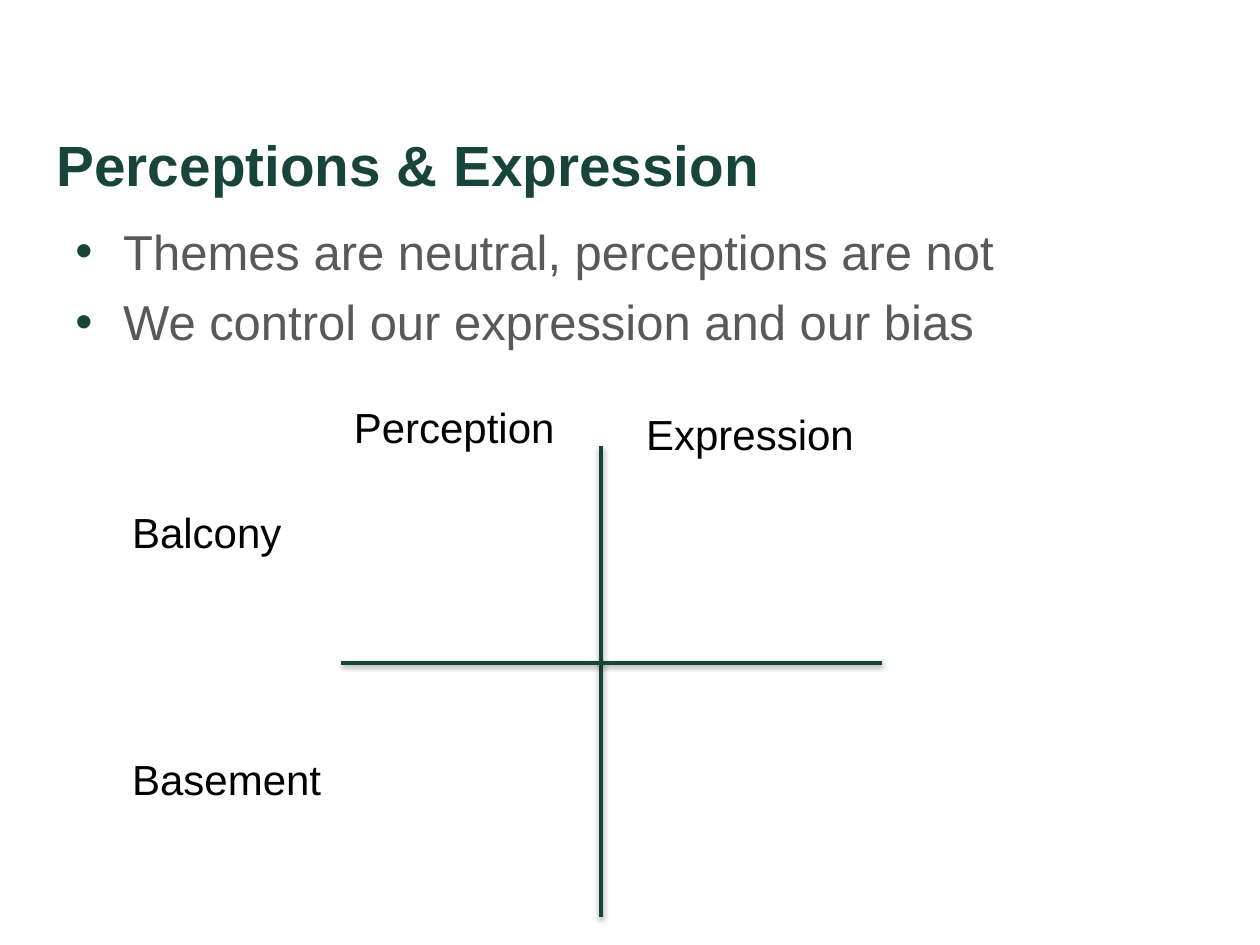
from dataclasses import dataclass

import pptx
import pptx.dml.color
import pptx.enum.shapes
import pptx.enum.text
import pptx.oxml
import pptx.oxml.ns
import pptx.util
from pptx.util import Inches


@dataclass(frozen=True)
class Theme:
    font: str = "Arial"
    green: str = "18453B"
    grey: str = "595959"
    black: str = "000000"
    title: float = 32.4
    body: float = 28
    label: float = 24
    gap: float = 6.5
    line: float = 2


THEME = Theme()


def rgb(code):
    return pptx.dml.color.RGBColor.from_string(code)


def make(xml):
    space = pptx.oxml.ns.nsdecls("a")
    return pptx.oxml.parse_xml(xml.replace(">", f" {space}>", 1))


def add_mark(para):
    """Give the paragraph a green bullet with a hanging indent."""
    props = para._p.get_or_add_pPr()
    props.set("marL", str(Inches(0.38)))
    props.set("indent", str(Inches(-0.38)))
    props.append(make(f'<a:buClr><a:srgbClr val="{THEME.green}"/></a:buClr>'))
    props.append(make('<a:buFont typeface="Arial"></a:buFont>'))
    props.append(make('<a:buChar char="•"></a:buChar>'))


def put_text(shape, *lines, size, color, bold=False, marks=False):
    frame = shape.text_frame
    frame.word_wrap = True
    frame.auto_size = pptx.enum.text.MSO_AUTO_SIZE.NONE
    frame.vertical_anchor = pptx.enum.text.MSO_ANCHOR.TOP
    for i, line in enumerate(lines):
        para = frame.add_paragraph() if i else frame.paragraphs[0]
        para.alignment = pptx.enum.text.PP_ALIGN.LEFT
        para.space_before = pptx.util.Pt(THEME.gap if i else 0)
        if marks:
            add_mark(para)
        run = para.add_run()
        run.text = line
        run.font.name = THEME.font
        run.font.size = pptx.util.Pt(size)
        run.font.bold = bold
        run.font.color.rgb = rgb(color)


def add_title(slide, text):
    title = slide.shapes.title
    title.left, title.top = Inches(0.35), Inches(0.98)
    title.width, title.height = Inches(9), Inches(0.53)
    put_text(title, text, size=THEME.title, color=THEME.green, bold=True)


def add_list(slide, *lines):
    box = slide.shapes.add_textbox(
        Inches(0.5), Inches(1.71), Inches(9), Inches(4.45))
    put_text(box, *lines, size=THEME.body, color=THEME.grey, marks=True)


def add_label(slide, text, left, top):
    box = slide.shapes.add_textbox(
        Inches(left), Inches(top), Inches(1.87), Inches(0.5))
    put_text(box, text, size=THEME.label, color=THEME.black)


def add_axis(slide, x1, y1, x2, y2):
    axis = slide.shapes.add_connector(
        pptx.enum.shapes.MSO_CONNECTOR.STRAIGHT,
        Inches(x1), Inches(y1), Inches(x2), Inches(y2))
    axis.line.color.rgb = rgb(THEME.green)
    axis.line.width = pptx.util.Pt(THEME.line)
    axis._element.spPr.append(make(
        '<a:effectLst><a:outerShdw blurRad="40000" dist="20000" '
        'dir="5400000" rotWithShape="0"><a:srgbClr val="000000">'
        '<a:alpha val="38000"/></a:srgbClr></a:outerShdw></a:effectLst>'))


def main():
    deck = pptx.Presentation()
    deck.slide_width, deck.slide_height = Inches(10), Inches(7.5)
    slide = deck.slides.add_slide(deck.slide_layouts[5])
    add_title(slide, "Perceptions & Expression")
    add_list(slide, "Themes are neutral, perceptions are not",
             "We control our expression and our bias")
    add_axis(slide, 4.77, 3.54, 4.77, 7.28)
    add_axis(slide, 2.71, 5.26, 7, 5.26)
    add_label(slide, "Perception", 2.71, 3.14)
    add_label(slide, "Expression", 5.03, 3.19)
    add_label(slide, "Balcony", 0.95, 3.97)
    add_label(slide, "Basement", 0.95, 5.93)
    deck.save("out.pptx")


if __name__ == "__main__":
    main()
